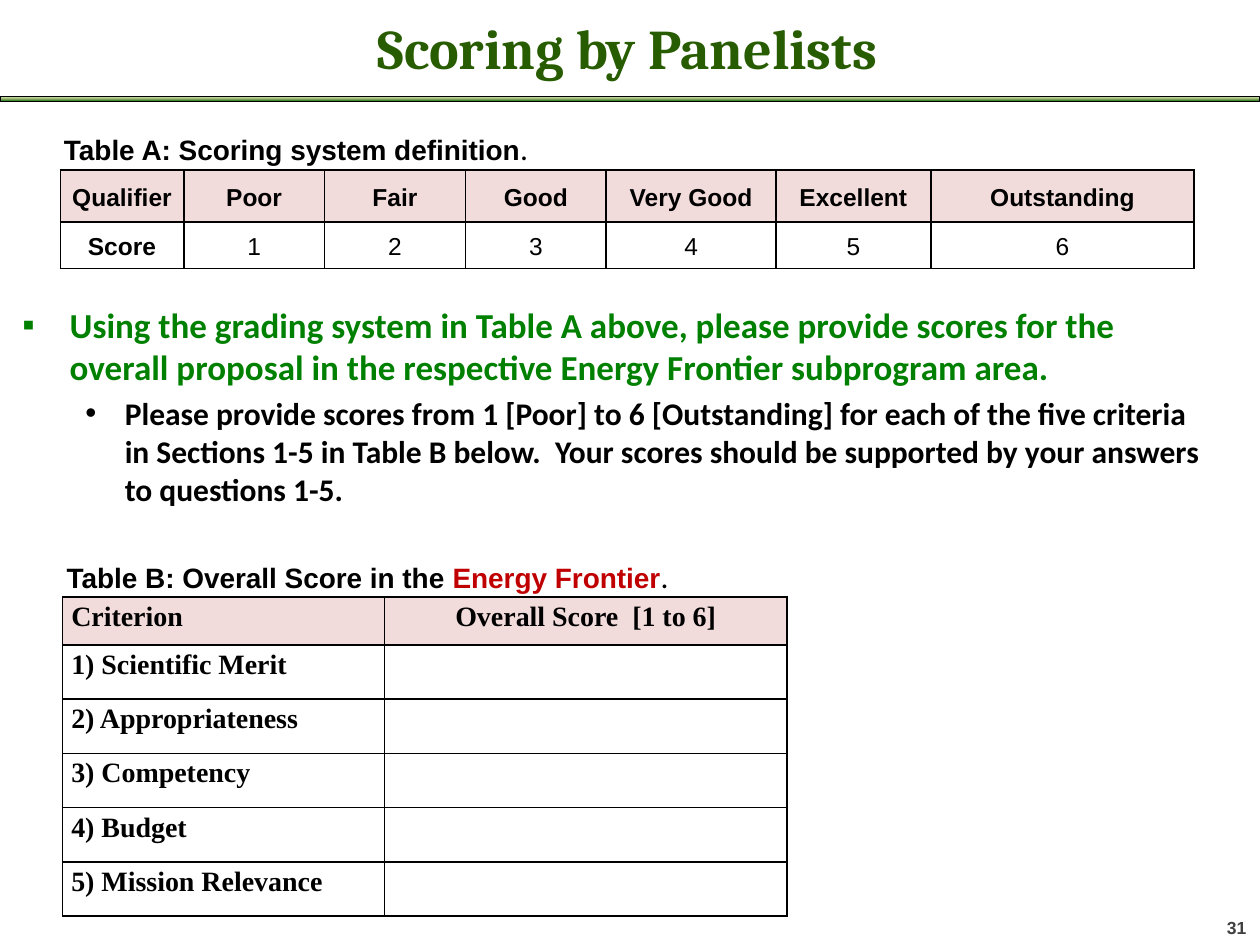
from dataclasses import dataclass
from typing import Any

from lxml import etree
from pptx import Presentation
from pptx import util as u
from pptx.dml.color import RGBColor
from pptx.enum import shapes, text
from pptx.oxml import ns

Pt = u.Pt
BLACK = RGBColor(0x00, 0x00, 0x00)
TITLE_GREEN = RGBColor(0x28, 0x5C, 0x00)
BODY_GREEN = RGBColor(0x00, 0x80, 0x00)
RED = RGBColor(0xC0, 0x00, 0x00)
GRAY = RGBColor(0x40, 0x40, 0x40)
PINK = RGBColor(0xF2, 0xDC, 0xDB)
RULE_STOPS = ((0, RGBColor(0xDD, 0xEB, 0xCF)), (50, RGBColor(0x9C, 0xB8, 0x6E)),
              (100, RGBColor(0x15, 0x6B, 0x13)))
LEFT, CENTER = text.PP_ALIGN.LEFT, text.PP_ALIGN.CENTER
TOP, MIDDLE = text.MSO_ANCHOR.TOP, text.MSO_ANCHOR.MIDDLE


def child(parent, tag, **attributes):
    return etree.SubElement(parent, ns.qn(tag), attributes)


@dataclass
class ScoringSlide:
    """Holds the slide and its shared style, with one method per kind of element."""

    slide: Any
    border: RGBColor = BLACK
    header_fill: RGBColor = PINK

    def add_run(self, paragraph, words, font, size, color=BLACK, bold=True):
        run = paragraph.add_run()
        run.text = words
        run.font.name, run.font.size = font, Pt(size)
        run.font.bold, run.font.color.rgb = bold, color

    def text_box(self, left, top, width, height, anchor=TOP, wrap=True):
        frame = self.slide.shapes.add_textbox(Pt(left), Pt(top), Pt(width), Pt(height)).text_frame
        frame.word_wrap, frame.vertical_anchor = wrap, anchor
        return frame

    def line_of_text(self, box, runs, align=LEFT, **frame_options):
        paragraph = self.text_box(*box, **frame_options).paragraphs[0]
        paragraph.alignment = align
        for run in runs:
            self.add_run(paragraph, *run)

    def bullet_list(self, box, items):
        frame = self.text_box(*box)
        for index, (level, mark, margin, indent, before, words, size, color) in enumerate(items):
            paragraph = frame.add_paragraph() if index else frame.paragraphs[0]
            paragraph.level = level
            if before:
                paragraph.space_before = Pt(before)
            properties = paragraph._p.get_or_add_pPr()
            properties.set("marL", str(Pt(margin)))
            properties.set("indent", str(Pt(indent)))
            child(properties, "a:buFont", typeface="Arial")
            child(properties, "a:buChar", char=mark)
            self.add_run(paragraph, words, "Calibri", size, color)

    def outline_cell(self, cell, heavy_sides):
        properties = cell._tc.get_or_add_tcPr()
        for index, side in enumerate("LRTB"):
            width = 1.5 if side in heavy_sides else 1
            line = etree.Element(ns.qn(f"a:ln{side}"), w=str(Pt(width)))
            child(child(line, "a:solidFill"), "a:srgbClr", val=str(self.border))
            properties.insert(index, line)

    def table(self, left, top, widths, heights, rows, font, size, anchor, align, bold, heavy):
        grid = self.slide.shapes.add_table(len(heights), len(widths), Pt(left), Pt(top),
                                           Pt(sum(widths)), Pt(sum(heights))).table
        for column, width in zip(grid.columns, widths):
            column.width = Pt(width)
        for r, (row, height) in enumerate(zip(rows, heights)):
            grid.rows[r].height = Pt(height)
            for c, words in enumerate(row):
                cell = grid.cell(r, c)
                cell.margin_left = cell.margin_right = Pt(5)
                cell.margin_top = cell.margin_bottom = 0
                cell.vertical_anchor = anchor
                if r:
                    cell.fill.background()
                else:
                    cell.fill.solid()
                    cell.fill.fore_color.rgb = self.header_fill
                self.outline_cell(cell, heavy.get(c, ""))
                paragraph = cell.text_frame.paragraphs[0]
                paragraph.alignment = align(c)
                paragraph.line_spacing, paragraph.space_after = 1.15, Pt(10)
                if words:
                    self.add_run(paragraph, words, font, size, bold=bold(r, c))
                else:
                    paragraph.font.size = Pt(size)

    def gradient_rule(self, left, top, width, height, stops):
        rule = self.slide.shapes.add_shape(shapes.MSO_SHAPE.RECTANGLE, Pt(left), Pt(top),
                                           Pt(width), Pt(height))
        rule.shadow.inherit = False
        rule.line.color.rgb, rule.line.width = self.border, Pt(0.5)
        gradient = etree.Element(ns.qn("a:gradFill"), rotWithShape="1")
        stop_list = child(gradient, "a:gsLst")
        for percent, color in stops:
            stop = child(stop_list, "a:gs", pos=str(percent * 1000))
            child(stop, "a:srgbClr", val=str(color))
        child(gradient, "a:lin", ang="5400000", scaled="0")
        rule._element.spPr.find(ns.qn("a:prstGeom")).addnext(gradient)


def main():
    deck = Presentation()
    deck.slide_width, deck.slide_height = Pt(720), Pt(540)
    page = ScoringSlide(deck.slides.add_slide(deck.slide_layouts[6]))

    page.line_of_text((34.5, 3, 648, 48), [("Scoring by Panelists", "Cambria", 32, TITLE_GREEN)],
                      align=CENTER, anchor=MIDDLE)
    page.bullet_list((5.75, 170, 690, 348), [
        (0, "▪", 27, -27, 0,
         "Using the grading system in Table A above, please provide scores for the overall "
         "proposal in the respective Energy Frontier subprogram area.", 20, BODY_GREEN),
        (1, "•", 58.5, -22.5, 3.6,
         "Please provide scores from 1 [Poor] to 6 [Outstanding] for each of the five criteria "
         "in Sections 1-5 in Table B below.  Your scores should be supported by your answers "
         "to questions 1-5.", 18, BLACK),
    ])

    qualifiers = ["Poor", "Fair", "Good", "Very Good", "Excellent", "Outstanding"]
    scores = [str(score) for score in range(1, len(qualifiers) + 1)]
    page.table(34.5, 97.25, [70.5, 80.5, 80.5, 80.5, 97, 88.5, 150.5], [29.75, 26.5],
               [["Qualifier", *qualifiers], ["Score", *scores]], "Arial", 14, MIDDLE,
               align=lambda c: CENTER, bold=lambda r, c: r == 0 or c == 0,
               heavy={0: "R", 1: "L"})

    criteria = ["Scientific Merit", "Appropriateness", "Competency", "Budget", "Mission Relevance"]
    criterion_rows = [[f"{number}) {name}", ""] for number, name in enumerate(criteria, 1)]
    page.table(35.75, 341.25, [184, 230], [27.25] + [31] * len(criteria),
               [["Criterion", "Overall Score  [1 to 6]"], *criterion_rows],
               "Times New Roman", 16, TOP, align=lambda c: CENTER if c else LEFT,
               bold=lambda r, c: True, heavy={})

    full_stop = (".", "Calibri", 18, BLACK, False)
    page.line_of_text((31, 314.75, 384.5, 29), [
        ("Table B: Overall Score in the ", "Arial", 16),
        ("Energy Frontier", "Arial", 16, RED), full_stop])
    page.line_of_text((29.5, 70, 282, 29), [
        ("Table A: Scoring system definition", "Arial", 16), full_stop])
    page.gradient_rule(0, 55, 720, 3, RULE_STOPS)
    page.line_of_text((694, 520.5, 26, 19.5), [("31", "Arial", 10, GRAY)], wrap=False)
    deck.save("out.pptx")


if __name__ == "__main__":
    main()
